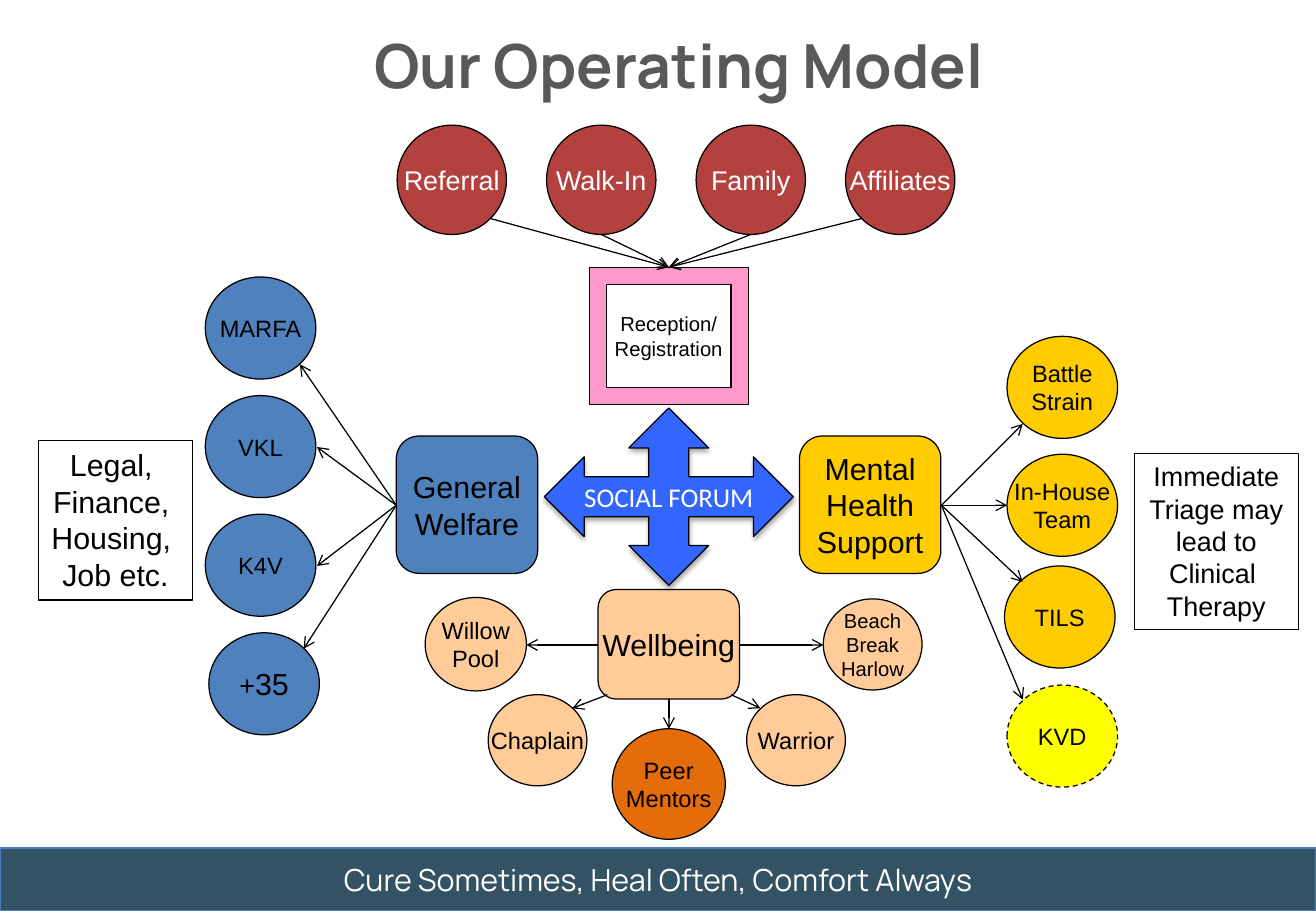
from dataclasses import dataclass

from lxml.etree import SubElement
from pptx import Presentation
from pptx.dml.color import RGBColor
from pptx.enum.dml import MSO_LINE
from pptx.enum.shapes import MSO_CONNECTOR, MSO_SHAPE
from pptx.enum.text import MSO_ANCHOR, MSO_AUTO_SIZE, PP_ALIGN
from pptx.oxml.ns import qn
from pptx.shapes.autoshape import Shape
from pptx.slide import Slide
from pptx.text.text import TextFrame
from pptx.util import Pt

BLACK, WHITE, GREY = "000000", "FFFFFF", "595959"
RED, PINK, BLUE, GOLD = "B3423F", "FF99CC", "4F81BD", "FFCC00"
PEACH, ORANGE, YELLOW, ROYAL, SLATE = "FFCC99", "E46C0A", "FFFF00", "3366FF", "335264"
OVAL, ROUNDED, RECTANGLE = MSO_SHAPE.OVAL, MSO_SHAPE.ROUNDED_RECTANGLE, MSO_SHAPE.RECTANGLE
PAGE_WIDTH, PAGE_HEIGHT = 780, 540


@dataclass(frozen=True)
class Node:
    text: str
    left: float
    top: float
    width: float
    height: float
    fill: str
    size: float = 14
    kind: MSO_SHAPE = OVAL
    color: str = BLACK
    font: str = "Arial"
    line: str = BLACK
    dashed: bool = False
    shadow: bool = False
    wrap: bool = False
    grow: bool = False


@dataclass(frozen=True)
class Fan:
    start: tuple[float, float]
    ends: list[tuple[float, float]]


def rgb(color: str) -> RGBColor:
    return RGBColor.from_string(color)


def write_text(frame: TextFrame, text: str, font: str, size: float, color: str, bold: bool = False) -> None:
    frame.text = text
    for para in frame.paragraphs:
        para.alignment = PP_ALIGN.CENTER
        para.font.name = font
        para.font.size = Pt(size)
        para.font.bold = bold
        para.font.color.rgb = rgb(color)


def add_shadow(box: Shape) -> None:
    effects = box._element.spPr.find(qn("a:effectLst"))
    shadow = SubElement(effects, qn("a:outerShdw"), blurRad=str(Pt(3.1)), dist=str(Pt(1.8)),
                        dir="5400000", rotWithShape="0")
    tint = SubElement(shadow, qn("a:srgbClr"), val=BLACK)
    SubElement(tint, qn("a:alpha"), val="35000")


def draw_node(page: Slide, node: Node) -> Shape:
    box = page.shapes.add_shape(node.kind, Pt(node.left), Pt(node.top), Pt(node.width), Pt(node.height))
    box.shadow.inherit = False
    if node.shadow:
        add_shadow(box)
    box.fill.solid()
    box.fill.fore_color.rgb = rgb(node.fill)
    box.line.color.rgb = rgb(node.line)
    box.line.width = Pt(0.75)
    if node.dashed:
        box.line.dash_style = MSO_LINE.DASH
    frame = box.text_frame
    frame.word_wrap = node.wrap
    frame.vertical_anchor = MSO_ANCHOR.TOP if node.grow else MSO_ANCHOR.MIDDLE
    if node.grow:
        frame.auto_size = MSO_AUTO_SIZE.SHAPE_TO_FIT_TEXT
    write_text(frame, node.text, node.font, node.size, node.color)
    return box


def draw_arrow(page: Slide, start: tuple[float, float], end: tuple[float, float]) -> None:
    arrow = page.shapes.add_connector(MSO_CONNECTOR.STRAIGHT, *map(Pt, start + end))
    arrow.line.color.rgb = rgb(BLACK)
    arrow.line.width = Pt(0.75)
    SubElement(arrow.line._get_or_add_ln(), qn("a:tailEnd"), type="arrow")
    SubElement(arrow._element.spPr, qn("a:effectLst"))


ENTRY_ROUTES = [
    Node(text, 235.4 + 88.6 * column, 74.2, 64.8, 64.8, RED, 16, color=WHITE)
    for column, text in enumerate(["Referral", "Walk-In", "Family", "Affiliates"])
]
WELFARE_PARTNERS = [
    Node(text, 121.7, 164.2 + 70.3 * row, 65.5, 60.5, BLUE)
    for row, text in enumerate(["MARFA", "VKL", "K4V"])
]
MORE_PARTNERS = Node("+", 123.8, 375.1, 65.5, 60.5, BLUE, 16)
HEALTH_PARTNERS = [
    Node("Battle\nStrain", 596.9, 199.4, 65.5, 60.5, GOLD),
    Node("In-House\nTeam", 596.9, 269.3, 65.5, 60.5, GOLD),
    Node("TILS", 595.4, 335.5, 65.5, 60.5, GOLD),
    Node("KVD", 596.9, 406.1, 65.5, 60.5, YELLOW, dashed=True),
]
WELLBEING_PARTNERS = [
    Node("Willow\nPool", 252, 354.2, 60, 55.4, PEACH),
    Node("Chaplain", 289.4, 411.8, 58.5, 54, PEACH),
    Node("Peer\nMentors", 362.9, 432, 67, 65.5, ORANGE),
    Node("Warrior", 442.6, 411.8, 58.5, 54, PEACH),
    Node("Beach\nBreak\nHarlow", 488, 355, 58.5, 54, PEACH, 12),
]
HUBS = [
    Node("Reception/\nRegistration", 349.2, 158.4, 94.3, 81.4, PINK, 12, MSO_SHAPE.FRAME),
    Node("General\nWelfare", 234.9, 258.5, 83.8, 81.4, BLUE, 18, ROUNDED),
    Node("Mental\nHealth\nSupport", 473.9, 258.5, 83.8, 81.4, GOLD, 18, ROUNDED),
    Node("Wellbeing", 354.5, 349.4, 83.8, 65, PEACH, 18, ROUNDED),
    Node("SOCIAL FORUM", 322.6, 241.9, 147.6, 105.1, ROYAL, 16, MSO_SHAPE.QUAD_ARROW,
         WHITE, "Calibri", shadow=True, wrap=True),
]
NOTES = [
    Node("Legal, \nFinance, \nHousing, \nJob etc.", 22.8, 261.2, 91.4, 94.5, WHITE, 18,
         RECTANGLE, wrap=True, grow=True),
    Node("Immediate Triage may lead to Clinical \nTherapy", 672.3, 269, 97.2, 104.2, WHITE, 16,
         RECTANGLE, wrap=True, grow=True),
]
MOTTO = Node("Cure Sometimes, Heal Often, Comfort Always", 0, 502.6, PAGE_WIDTH, 37.4, SLATE, 18,
             RECTANGLE, WHITE, "Manrope", "4B7EBC", shadow=True, wrap=True)
RECEPTION_TOP = (396.5, 158.4)
FANS = [
    Fan((234.9, 299.5), [(177.8, 216), (187.9, 265), (187.9, 335.5), (180, 384.5)]),
    Fan((558, 299.5), [(606.2, 251.3), (596.9, 299.5), (606.2, 344.9), (606.2, 414.7)]),
    Fan((354.5, 382.3), [(312, 382.3)]),
    Fan((438.3, 382.3), [(488, 382.3)]),
    Fan((396.5, 414.6), [(396.5, 432)]),
    Fan((360, 411.8), [(339.3, 419.8)]),
    Fan((433.4, 411.8), [(450.7, 419.8)]),
] + [Fan(start, [RECEPTION_TOP]) for start in [(290.9, 129.6), (356.4, 139), (445, 139), (510.5, 129.6)]]


def main() -> None:
    deck = Presentation()
    deck.slide_width, deck.slide_height = Pt(PAGE_WIDTH), Pt(PAGE_HEIGHT)
    page = deck.slides.add_slide(deck.slide_layouts[5])

    title = page.shapes.title
    title.left, title.top, title.width, title.height = Pt(146), Pt(3.6), Pt(512.6), Pt(68.4)
    title.text_frame.vertical_anchor = MSO_ANCHOR.MIDDLE
    write_text(title.text_frame, "Our Operating Model", "Manrope", 36, GREY, bold=True)

    partners = ENTRY_ROUTES + WELFARE_PARTNERS + HEALTH_PARTNERS + WELLBEING_PARTNERS
    for node in [MOTTO] + HUBS + partners + NOTES:
        draw_node(page, node)

    more = draw_node(page, MORE_PARTNERS)
    span = more.text_frame.paragraphs[0].add_run()
    span.text = "35"
    span.font.size = Pt(18)

    for fan in FANS:
        for end in fan.ends:
            draw_arrow(page, fan.start, end)

    deck.save("out.pptx")


if __name__ == "__main__":
    main()
